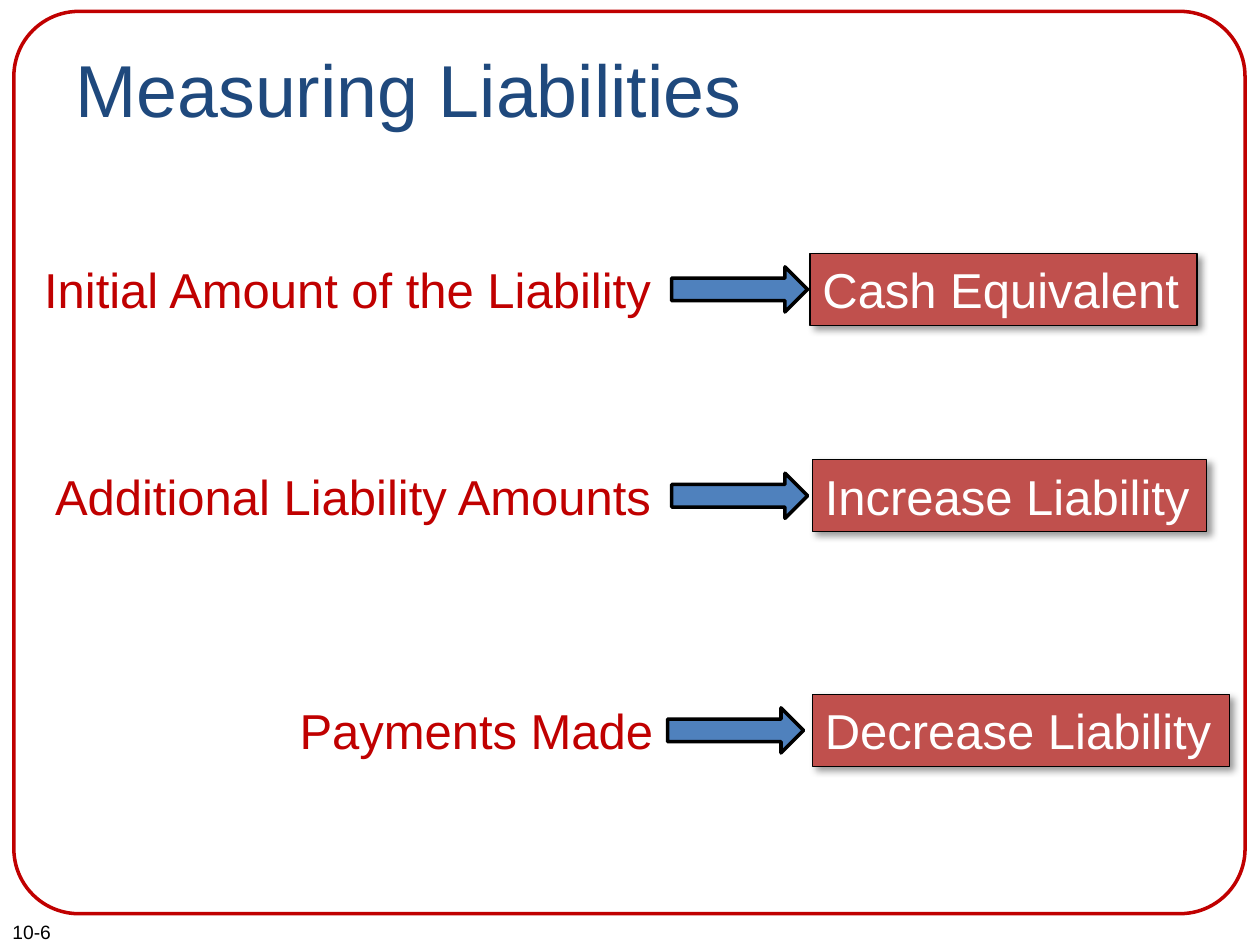
from lxml import etree
from pptx import Presentation
from pptx.dml.color import RGBColor
from pptx.enum.shapes import MSO_SHAPE
from pptx.enum.text import MSO_ANCHOR, PP_ALIGN
from pptx.oxml.ns import qn
from pptx.util import Cm, Pt

RECTANGLE = MSO_SHAPE.RECTANGLE
ROUNDED = MSO_SHAPE.ROUNDED_RECTANGLE
ARROW = MSO_SHAPE.RIGHT_ARROW
TOP = MSO_ANCHOR.TOP
LEFT = PP_ALIGN.LEFT

FONT = "Arial"
RED, BRICK, BLUE, NAVY = "C00000", "C0504D", "4F81BD", "1F497D"
BLACK, WHITE = "000000", "FFFFFF"

TITLE = "Measuring Liabilities"
PAGE_NUMBER = "10-6"
ROWS = [
    {"cause": "Initial Amount of the Liability", "effect": "Cash Equivalent",
     "top": 5.11, "cause_left": 0.64, "arrow_left": 13.54, "effect_left": 16.33, "effect_width": 7.8},
    {"cause": "Additional Liability Amounts", "effect": "Increase Liability",
     "top": 9.27, "cause_left": 0.86, "arrow_left": 13.54, "effect_left": 16.38, "effect_width": 7.95},
    {"cause": "Payments Made", "effect": "Decrease Liability",
     "top": 14.0, "cause_left": 5.79, "arrow_left": 13.46, "effect_left": 16.38, "effect_width": 8.41},
]
ROW_HEIGHT = 1.45
CAUSE_RIGHT = 13.54
ARROW_WIDTH, ARROW_HEIGHT = 2.74, 0.91


def color(value):
    return RGBColor.from_string(value)


def write(box, text, size, text_color, wrap=False):
    frame = box.text_frame
    frame.word_wrap = wrap
    frame.vertical_anchor = TOP
    para = frame.paragraphs[0]
    para.text = text
    para.alignment = LEFT
    para.font.name = FONT
    para.font.size = Pt(size)
    para.font.color.rgb = color(text_color)


def add_text(page, area, text, size, text_color, wrap=False):
    box = page.shapes.add_textbox(*map(Cm, area))
    write(box, text, size, text_color, wrap)


def add_outline(shapes, kind, area, line_color, line_width, fill=None):
    shape = shapes.add_shape(kind, *map(Cm, area))
    shape.shadow.inherit = False
    if fill:
        shape.fill.solid()
        shape.fill.fore_color.rgb = color(fill)
    else:
        shape.fill.background()
    shape.line.color.rgb = color(line_color)
    shape.line.width = Pt(line_width)
    return shape


def add_shadow(shape):
    effects = shape.element.spPr.find(qn("a:effectLst"))
    shadow = etree.SubElement(effects, qn("a:outerShdw"), blurRad=str(Pt(4)),
                              dist=str(Pt(3)), dir="2700000", algn="tl", rotWithShape="0")
    tint = etree.SubElement(shadow, qn("a:srgbClr"), val=BLACK)
    etree.SubElement(tint, qn("a:alpha"), val="40000")


def add_row(page, row):
    top = row["top"]
    left = row["cause_left"]
    add_text(page, (left, top, CAUSE_RIGHT - left, ROW_HEIGHT), row["cause"], 28, RED)
    group = page.shapes.add_group_shape()
    arrow_top = top + (ROW_HEIGHT - ARROW_HEIGHT) / 2
    add_outline(group.shapes, ARROW, (row["arrow_left"], arrow_top, ARROW_WIDTH, ARROW_HEIGHT),
                BLACK, 2, BLUE)
    effect = add_outline(group.shapes, RECTANGLE,
                         (row["effect_left"], top, row["effect_width"], ROW_HEIGHT),
                         BLACK, 0.75, BRICK)
    add_shadow(effect)
    write(effect, row["effect"], 28, WHITE)


def main():
    deck = Presentation()
    deck.slide_width, deck.slide_height = Cm(25.4), Cm(19.05)
    page = deck.slides.add_slide(deck.slide_layouts[6])
    add_text(page, (0, 18.42, 3.6, 0.73), PAGE_NUMBER, 11, BLACK, True)
    border = add_outline(page.shapes, ROUNDED, (0.28, 0.23, 24.82, 18.19), RED, 2)
    border.adjustments[0] = 0.072
    add_text(page, (1.27, 0.76, 22.86, 3.18), TITLE, 42, NAVY, True)
    for row in ROWS:
        add_row(page, row)
    deck.save("out.pptx")


if __name__ == "__main__":
    main()
